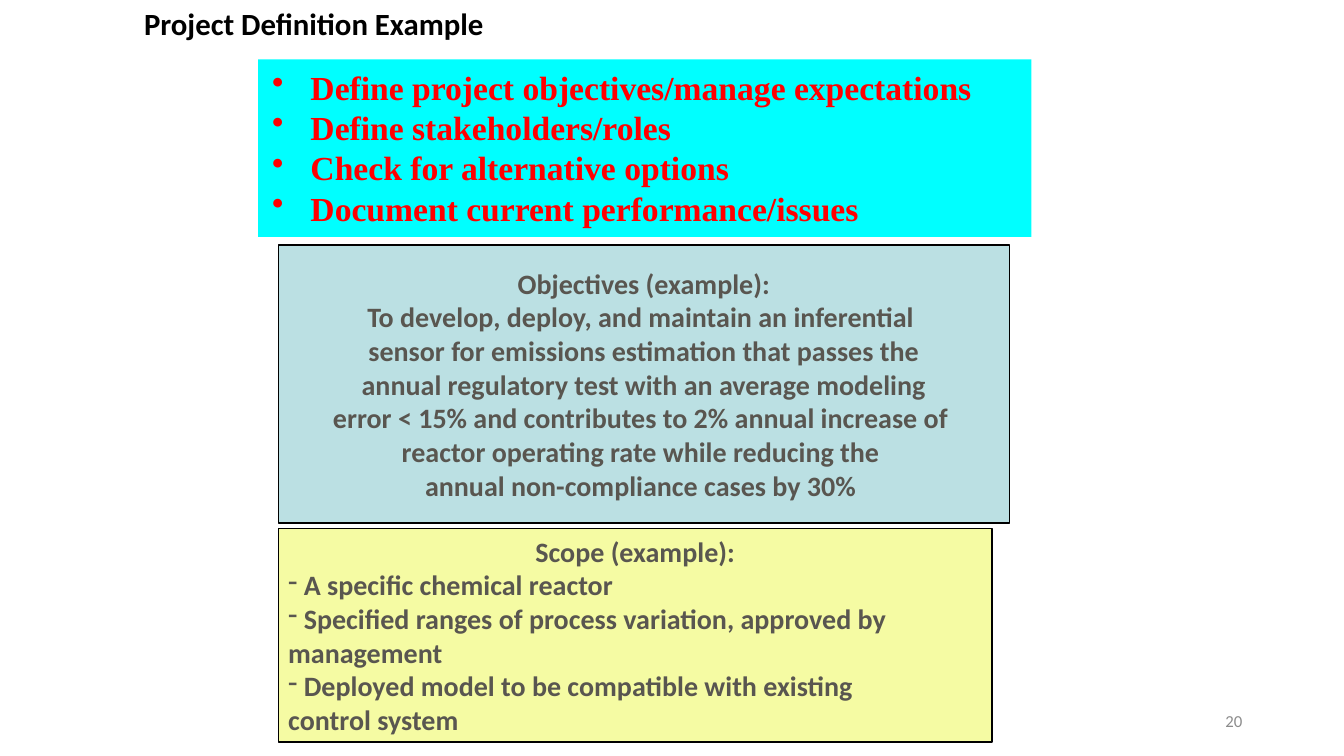
from dataclasses import dataclass

from lxml.etree import SubElement
from pptx import Presentation
from pptx.dml.color import RGBColor
from pptx.enum.shapes import MSO_SHAPE
from pptx.enum.text import MSO_ANCHOR, MSO_AUTO_SIZE, PP_ALIGN
from pptx.oxml.ns import qn
from pptx.util import Pt


@dataclass(frozen=True)
class TextStyle:
    """Font, size, colour and weight of a text."""
    font: str
    size: int
    color: str
    bold: bool = True


@dataclass(frozen=True)
class Theme:
    """Colours and type sizes of the slide."""
    title: TextStyle = TextStyle("Calibri", 22, "000000")
    steps: TextStyle = TextStyle("Times New Roman", 24, "FF0000")
    example: TextStyle = TextStyle("Calibri", 20, "595650")
    number: TextStyle = TextStyle("Calibri", 12, "8C8C8C", False)
    cyan: str = "00FFFF"
    blue: str = "BBE0E3"
    yellow: str = "F5FBA3"
    outline: str = "000000"


class SlideBuilder:
    """Holds the theme and the current page, and draws its elements."""
    PX = 9144

    def __init__(self, theme, width, height):
        """Start a deck with one blank page."""
        self.theme = theme
        self.deck = Presentation()
        self.deck.slide_width = width * self.PX
        self.deck.slide_height = height * self.PX
        self.page = self.deck.slides.add_slide(self.deck.slide_layouts[6])

    def place(self, bounds):
        """Turn px bounds into EMU."""
        return [length * self.PX for length in bounds]

    def paragraph(self, frame, index, text, style, align=PP_ALIGN.LEFT, bullet=None, indent=0):
        """Write one styled paragraph, with a bullet if given."""
        para = frame.paragraphs[0] if index == 0 else frame.add_paragraph()
        para.text = text
        para.alignment = align
        if bullet:
            properties = para._p.get_or_add_pPr()
            properties.set("marL", str(indent * self.PX))
            properties.set("indent", str(-indent * self.PX))
            SubElement(properties, qn("a:buChar")).set("char", bullet)
        para.font.name = style.font
        para.font.size = Pt(style.size)
        para.font.bold = style.bold
        para.font.color.rgb = RGBColor.from_string(style.color)
        return para

    def label(self, bounds, text, style, align=PP_ALIGN.LEFT, spacing=1.0):
        """Draw a text box centred vertically."""
        frame = self.page.shapes.add_textbox(*self.place(bounds)).text_frame
        frame.word_wrap = True
        frame.vertical_anchor = MSO_ANCHOR.MIDDLE
        self.paragraph(frame, 0, text, style, align).line_spacing = spacing

    def panel(self, bounds, fill, outlined=True):
        """Draw a filled rectangle and return its text frame."""
        box = self.page.shapes.add_shape(MSO_SHAPE.RECTANGLE, *self.place(bounds))
        box.shadow.inherit = False
        box.fill.solid()
        box.fill.fore_color.rgb = RGBColor.from_string(fill)
        if outlined:
            box.line.color.rgb = RGBColor.from_string(self.theme.outline)
            box.line.width = Pt(1)
        else:
            box.line.fill.background()
        frame = box.text_frame
        frame.vertical_anchor = MSO_ANCHOR.MIDDLE
        frame.word_wrap = False
        return frame

    def steps(self, bounds, items):
        """Draw the bulleted list of steps."""
        frame = self.panel(bounds, self.theme.cyan, outlined=False)
        frame.vertical_anchor = MSO_ANCHOR.TOP
        frame.word_wrap = True
        frame.auto_size = MSO_AUTO_SIZE.SHAPE_TO_FIT_TEXT
        frame.margin_left = frame.margin_right = 14 * self.PX
        frame.margin_top = frame.margin_bottom = 7 * self.PX
        for index, item in enumerate(items):
            self.paragraph(frame, index, item, self.theme.steps, bullet="•", indent=38)

    def example(self, bounds, fill, heading, body=None, items=()):
        """Draw an example panel with a heading and a body or dashed items."""
        frame = self.panel(bounds, fill)
        style = self.theme.example
        self.paragraph(frame, 0, heading, style, PP_ALIGN.CENTER)
        if body:
            self.paragraph(frame, 1, body, style, PP_ALIGN.CENTER)
        for index, item in enumerate(items, 1):
            self.paragraph(frame, index, item, style, bullet="-")


def main():
    """Build the slide and save it."""
    theme = Theme()
    slide = SlideBuilder(theme, 1333, 750)
    slide.label((942, 695, 300, 40), "20", theme.number, PP_ALIGN.RIGHT)
    slide.label((133, 32, 942, 28), "Project Definition Example\v", theme.title, spacing=0.7)
    slide.steps((256, 59, 767, 176), [
        "Define project objectives/manage expectations",
        "Define stakeholders/roles",
        "Check for alternative options",
        "Document current performance/issues",
    ])
    slide.example((276, 243, 725, 276), theme.blue, "Objectives (example):", body="\v".join([
        "To develop, deploy, and maintain an inferential ",
        "sensor for emissions estimation that passes the",
        "annual regulatory test with an average modeling",
        "error < 15% and contributes to 2% annual increase of ",
        "reactor operating rate while reducing the ",
        "annual non-compliance cases by 30% ",
    ]))
    slide.example((276, 524, 708, 212), theme.yellow, "Scope (example):", items=[
        " A specific chemical reactor",
        " Specified ranges of process variation, approved by\vmanagement",
        " Deployed model to be compatible with existing\vcontrol system",
    ])
    slide.deck.save("out.pptx")


if __name__ == "__main__":
    main()
